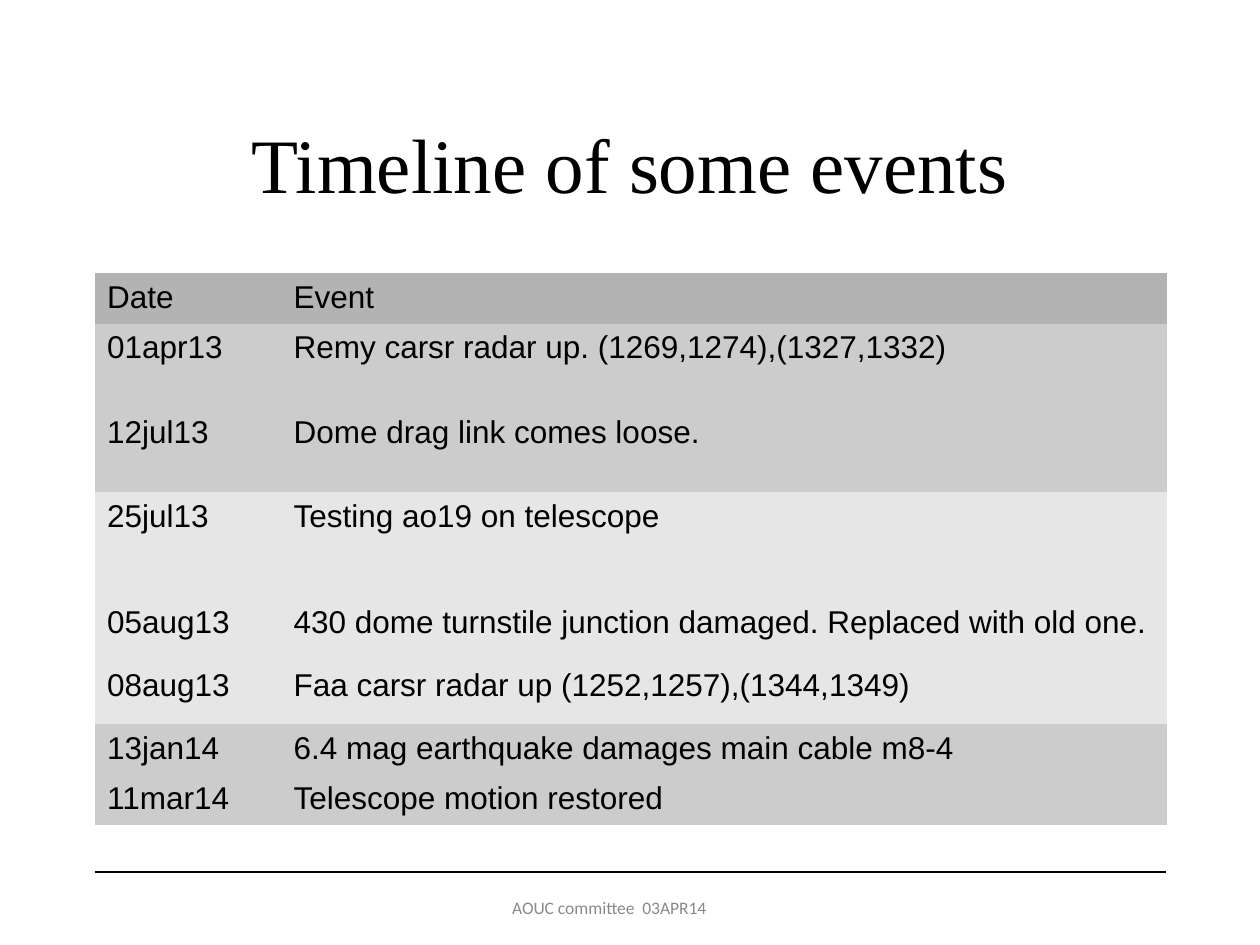
from lxml.etree import SubElement
from pptx import Presentation
from pptx.dml.color import RGBColor
from pptx.enum.shapes import MSO_CONNECTOR
from pptx.enum.text import MSO_ANCHOR, PP_ALIGN
from pptx.oxml.ns import qn
from pptx.util import Inches, Pt

COLORS = {
    "black": "000000", "white": "FFFFFF", "footer": "898989",
    "header": "B3B3B3", "dark": "CCCCCC", "light": "E6E6E6",
}
COLUMN_WIDTHS = [1.48, 7.03]
EVENTS = [
    ("Date", "Event", 0.38, "header"),
    ("01apr13", "Remy carsr radar up. (1269,1274),(1327,1332)", 0.67, "dark"),
    ("12jul13", "Dome drag link comes loose.", 0.67, "dark"),
    ("25jul13", "Testing ao19 on telescope", 0.84, "light"),
    ("05aug13", "430 dome turnstile junction damaged. Replaced with old one.", 0.5, "light"),
    ("08aug13", "Faa carsr radar up (1252,1257),(1344,1349)", 0.5, "light"),
    ("13jan14", "6.4 mag earthquake damages main cable m8-4", 0.38, "dark"),
    ("11mar14", "Telescope motion restored", 0.38, "dark"),
]


class SlideBuilder:
    """Draws styled elements on the current slide."""

    def __init__(self, page):
        self.page = page

    def color(self, name):
        return RGBColor.from_string(COLORS[name])

    def style(self, paragraph, font, size, color):
        paragraph.font.name = font
        paragraph.font.size = Pt(size)
        paragraph.font.color.rgb = self.color(color)

    def place(self, box, left, top, width, height):
        box.left, box.top = Inches(left), Inches(top)
        box.width, box.height = Inches(width), Inches(height)

    def centered(self, box, text, font, size, color):
        frame = box.text_frame
        frame.text = text
        frame.word_wrap = True
        frame.vertical_anchor = MSO_ANCHOR.MIDDLE
        paragraph = frame.paragraphs[0]
        paragraph.alignment = PP_ALIGN.CENTER
        self.style(paragraph, font, size, color)

    def title(self, text):
        box = self.page.shapes.title
        self.place(box, 0.75, 0.67, 8.5, 1.25)
        self.centered(box, text, "Times New Roman", 44, "black")

    def footer(self, text):
        box = self.page.shapes.add_textbox(
            Inches(3.25), Inches(7), Inches(3.17), Inches(0.4))
        self.centered(box, text, "Calibri", 10, "footer")

    def rule(self, left, right, top):
        line = self.page.shapes.add_connector(
            MSO_CONNECTOR.STRAIGHT, Inches(left), Inches(top), Inches(right), Inches(top))
        line.line.color.rgb = self.color("black")
        line.line.width = Pt(0.75)
        SubElement(line._element.spPr, qn("a:effectLst"))

    def borders(self, cell):
        properties = cell._tc.get_or_add_tcPr()
        for side in ("a:lnL", "a:lnR", "a:lnT", "a:lnB"):
            border = SubElement(properties, qn(side), w=str(Pt(0.03)))
            fill = SubElement(border, qn("a:solidFill"))
            SubElement(fill, qn("a:srgbClr"), val=COLORS["white"])

    def cell(self, cell, text, fill):
        self.borders(cell)
        cell.fill.solid()
        cell.fill.fore_color.rgb = self.color(fill)
        cell.margin_left = cell.margin_right = Inches(0.1)
        cell.margin_top, cell.margin_bottom = Inches(0.07), Inches(0.05)
        cell.text = text
        paragraph = cell.text_frame.paragraphs[0]
        paragraph.line_spacing = 0.93
        paragraph.font.bold = False
        self.style(paragraph, "Arial", 18, "black")

    def table(self, left, top, widths, rows):
        height = sum(row[2] for row in rows)
        table = self.page.shapes.add_table(
            len(rows), len(widths), Inches(left), Inches(top),
            Inches(sum(widths)), Inches(height)).table
        table.first_row = table.horz_banding = False
        for column, width in zip(table.columns, widths):
            column.width = Inches(width)
        for index, (date, event, row_height, fill) in enumerate(rows):
            table.rows[index].height = Inches(row_height)
            for column, text in enumerate((date, event)):
                self.cell(table.cell(index, column), text, fill)


def main():
    deck = Presentation()
    deck.slide_width, deck.slide_height = Inches(10), Inches(7.5)
    builder = SlideBuilder(deck.slides.add_slide(deck.slide_layouts[5]))
    builder.rule(0.75, 9.25, 6.92)
    builder.footer("AOUC committee  03APR14")
    builder.title("Timeline of some events")
    builder.table(0.75, 2.17, COLUMN_WIDTHS, EVENTS)
    deck.save("out.pptx")


if __name__ == "__main__":
    main()
